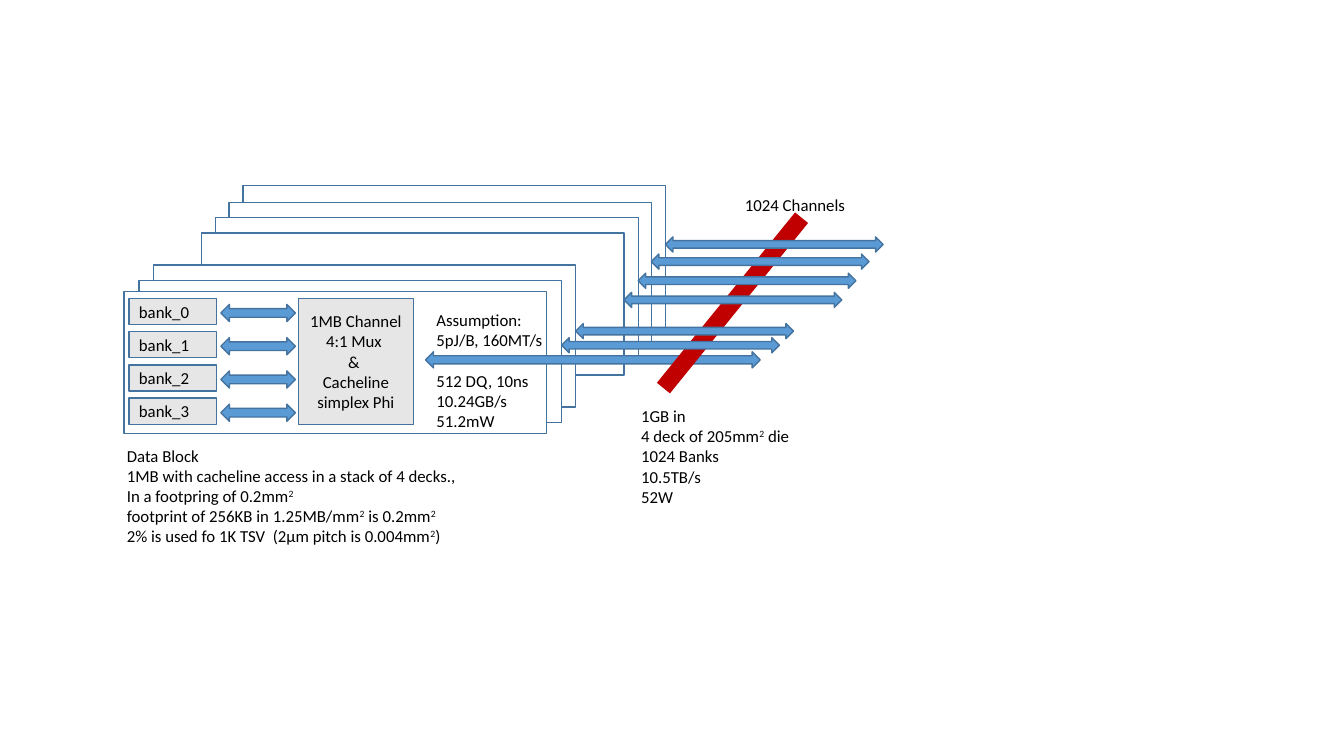
import pptx
import pptx.dml.color
import pptx.enum.shapes
import pptx.enum.text
import pptx.util
import lxml.etree
from pptx.util import Inches

SHAPE = pptx.enum.shapes.MSO_SHAPE
ANCHOR = pptx.enum.text.MSO_ANCHOR
ALIGN = pptx.enum.text.PP_ALIGN

OUTLINE, ARROW, GREY, RED = "43739E", "5B9BD5", "E7E6E6", "C00000"
DECK_W, DECK_H = 4.19, 1.41
LINE_GAP = 14.6

# Left and top of each deck from back to front, and top of its channel arrow
DECKS = [
    (2.41, 1.84, 2.35),
    (2.27, 2.01, 2.52),
    (2.14, 2.16, 2.71),
    (2.00, 2.31, 2.90),
    (1.52, 2.63, 3.21),
    (1.38, 2.78, 3.35),
]
FRONT_DECK = (1.23, 2.89)

DATA_BLOCK = [
    "Data Block",
    "1MB with cacheline access in a stack of 4 decks.,",
    "In a footpring of 0.2mm²",
    "footprint of 256KB in 1.25MB/mm² is 0.2mm²",
    "2% is used fo 1K TSV  (2µm pitch is 0.004mm²)",
]
ASSUMPTION = ["Assumption:", "5pJ/B, 160MT/s", "512 DQ, 10ns", "10.24GB/s", "51.2mW"]
TOTALS = ["1GB in", "4 deck of 205mm² die", "1024 Banks", "10.5TB/s", "52W"]
CHANNEL = ["1MB Channel", "4:1 Mux ", "& ", "Cacheline simplex Phi"]


def rgb(value):
    return pptx.dml.color.RGBColor.from_string(value)


def add_run(p, text, raised=False):
    r = p.add_run()
    r.text = text
    r.font.size = pptx.util.Pt(12)
    r.font.name = "Calibri"
    r.font.color.rgb = rgb("000000")
    if raised:
        r._r.get_or_add_rPr().set("baseline", "30000")


def write(tf, lines, align=ALIGN.LEFT, anchor=ANCHOR.TOP):
    """Fill a text frame, setting each ² as a raised 2."""
    tf.word_wrap = True
    tf.vertical_anchor = anchor
    for i, line in enumerate(lines):
        p = tf.paragraphs[0] if i == 0 else tf.add_paragraph()
        p.alignment = align
        for j, part in enumerate(line.split("²")):
            if j:
                add_run(p, "2", raised=True)
            if part:
                add_run(p, part)


def add_shape(s, kind, left, top, width, height, fill):
    sp = s.shapes.add_shape(kind, Inches(left), Inches(top), Inches(width), Inches(height))
    sp.shadow.inherit = False
    sp.fill.solid()
    sp.fill.fore_color.rgb = rgb(fill)
    sp.line.color.rgb = rgb(OUTLINE)
    sp.line.width = pptx.util.Pt(1)
    return sp


def add_deck(s, left, top):
    add_shape(s, SHAPE.RECTANGLE, left, top, DECK_W, DECK_H, "FFFFFF")


def add_box(s, left, top, width, height, lines, align):
    sp = add_shape(s, SHAPE.RECTANGLE, left, top, width, height, GREY)
    write(sp.text_frame, lines, align, ANCHOR.MIDDLE)


def add_arrow(s, left, top, width, height):
    add_shape(s, SHAPE.LEFT_RIGHT_ARROW, left, top, width, height, ARROW)


def add_text(s, left, top, width, height, lines, anchor=ANCHOR.TOP):
    sp = s.shapes.add_textbox(Inches(left), Inches(top), Inches(width), Inches(height))
    write(sp.text_frame, lines, anchor=anchor)
    return sp.text_frame


def add_bus(s, x1, y1, x2, y2):
    line = s.shapes.add_connector(pptx.enum.shapes.MSO_CONNECTOR.STRAIGHT,
                                  Inches(x1), Inches(y1), Inches(x2), Inches(y2))
    line.line.color.rgb = rgb(RED)
    line.line.width = pptx.util.Pt(12)
    lxml.etree.SubElement(line._element.spPr, pptx.oxml.ns.qn("a:effectLst"))


def main():
    prs = pptx.Presentation()
    prs.slide_width, prs.slide_height = Inches(13.33), Inches(7.5)
    s = prs.slides.add_slide(prs.slide_layouts[6])

    for left, top, _ in DECKS:
        add_deck(s, left, top)
    add_deck(s, *FRONT_DECK)

    for i in range(4):
        add_box(s, 1.28, 2.96 + 0.33 * i, 0.87, 0.26, [f"bank_{i}"], ALIGN.LEFT)
        add_arrow(s, 2.19, 3.02 + 0.33 * i, 0.74, 0.17)
    add_box(s, 2.96, 2.96, 1.14, 1.25, CHANNEL, ALIGN.CENTER)

    add_text(s, 1.16, 4.37, 3.6, 1.11, DATA_BLOCK)
    add_arrow(s, 4.22, 3.49, 3.32, 0.16)
    tf = add_text(s, 4.23, 3.02, 1.52, 1.31, ASSUMPTION, ANCHOR.MIDDLE)
    tf.paragraphs[2].space_before = pptx.util.Pt(LINE_GAP)

    add_bus(s, 6.58, 3.85, 7.95, 2.16)
    for left, _, arrow_top in reversed(DECKS):
        add_arrow(s, left + DECK_W, arrow_top, 2.16, 0.15)
    add_text(s, 6.26, 3.97, 1.69, 1.11, TOTALS, ANCHOR.MIDDLE)
    add_text(s, 7.29, 1.88, 1.31, 0.3, ["1024 Channels"])

    prs.save("out.pptx")


if __name__ == "__main__":
    main()
